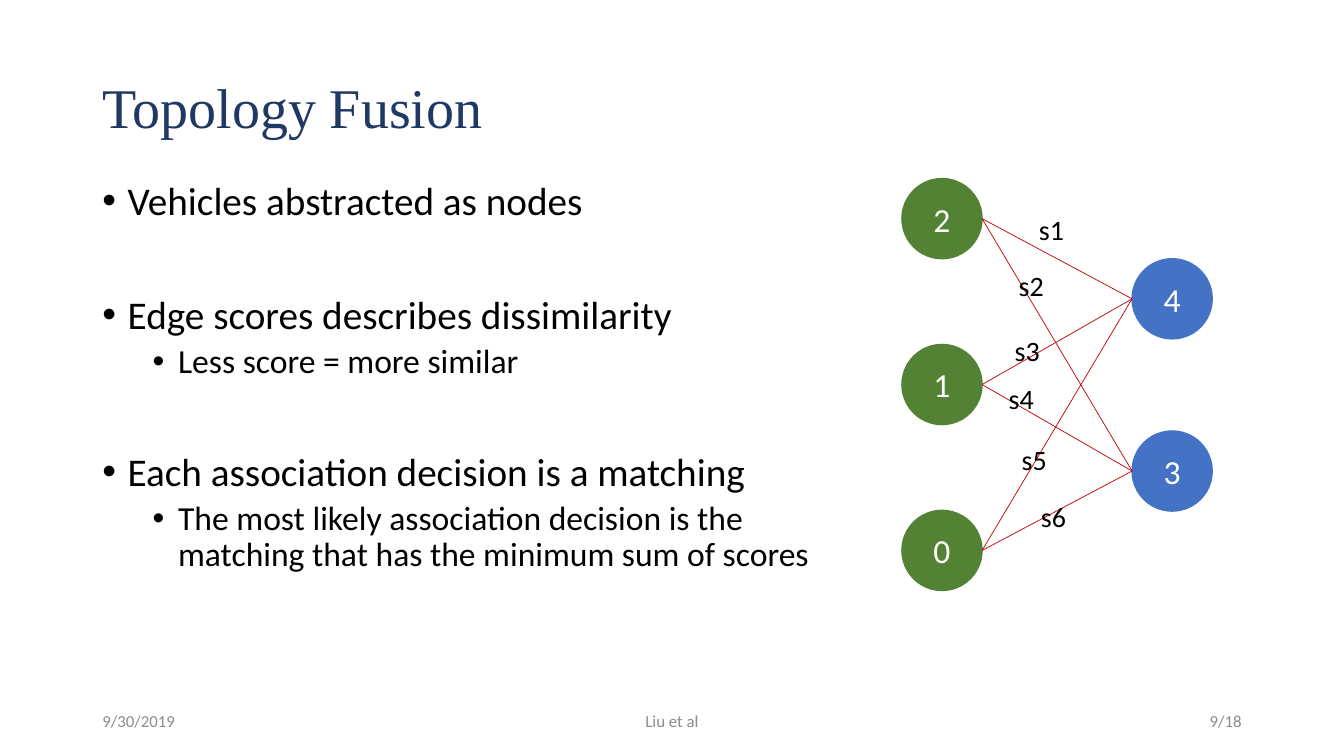
from lxml.etree import SubElement
from pptx import Presentation
from pptx.dml.color import RGBColor
from pptx.enum.shapes import MSO_CONNECTOR, MSO_SHAPE
from pptx.enum.text import MSO_ANCHOR, PP_ALIGN
from pptx.oxml.ns import qn
from pptx.util import Cm, Pt

POINTS = [
    (0, 0, "Vehicles abstracted as nodes"),
    (0, 51, "Edge scores describes dissimilarity"),
    (1, 5, "Less score = more similar"),
    (0, 51, "Each association decision is a matching"),
    (1, 5, "The most likely association decision is the matching "
           "that has the minimum sum of scores"),
]
LABELS = [("s1", 3.2, 0.74), ("s2", 2.69, 2.13), ("s3", 2.59, 3.78),
          ("s4", 2.44, 5), ("s5", 2.77, 6.53), ("s6", 3.25, 7.95)]


def color(code):
    """Turn a hex string into a colour."""
    return RGBColor.from_string(code)


def style(para, size, code, font="Calibri", align=PP_ALIGN.LEFT):
    """Set the font and alignment of a paragraph."""
    para.alignment = align
    para.font.size = Pt(size)
    para.font.name = font
    para.font.color.rgb = color(code)


def add_text(slide, box, text, size, code, font="Calibri",
             align=PP_ALIGN.LEFT, anchor=MSO_ANCHOR.MIDDLE):
    """Place one line of text in a box and return its paragraph."""
    frame = slide.shapes.add_textbox(*map(Cm, box)).text_frame
    frame.word_wrap = True
    frame.vertical_anchor = anchor
    para = frame.paragraphs[0]
    para.text = text
    style(para, size, code, font, align)
    return para


def add_title(slide, box):
    """Place the slide title."""
    para = add_text(slide, box, "Topology Fusion", 40, "203864",
                    "Times New Roman")
    para.line_spacing = 0.9


def add_points(slide, box):
    """Place the two-level bullet list."""
    frame = slide.shapes.add_textbox(*map(Cm, box)).text_frame
    frame.word_wrap = True
    for i, (level, space, text) in enumerate(POINTS):
        para = frame.add_paragraph() if i else frame.paragraphs[0]
        para.text = text
        para.level = level
        para.line_spacing = 0.9
        para.space_before = Pt(space)
        props = para._p.get_or_add_pPr()
        props.set("marL", str(Cm(0.64 + 1.27 * level)))
        props.set("indent", str(Cm(-0.64)))
        SubElement(props, qn("a:buFont"), typeface="Arial")
        SubElement(props, qn("a:buChar"), char="•")
        style(para, 28 - 4 * level, "000000")


def add_node(slide, box, text, code):
    """Draw a numbered round node."""
    node = slide.shapes.add_shape(MSO_SHAPE.OVAL, *map(Cm, box))
    node.shadow.inherit = False
    node.fill.solid()
    node.fill.fore_color.rgb = color(code)
    node.line.color.rgb = color(code)
    node.line.width = Pt(1)
    frame = node.text_frame
    frame.vertical_anchor = MSO_ANCHOR.MIDDLE
    frame.paragraphs[0].text = text
    style(frame.paragraphs[0], 24, "FFFFFF", align=PP_ALIGN.CENTER)


def add_edge(slide, start, end):
    """Draw a thin red edge between two points."""
    edge = slide.shapes.add_connector(MSO_CONNECTOR.STRAIGHT,
                                      *map(Cm, start + end))
    edge.line.color.rgb = color("C00000")
    edge.line.width = Pt(0.5)
    SubElement(edge._element.spPr, qn("a:effectLst"))


def add_graph(slide, box):
    """Draw the two-sided graph with its scored edges."""
    left, top, width, height = box
    size = 2.02
    right = left + width - size
    greens = [top + i * (height - size) / 2 for i in range(3)]
    blues = [top + 2.02 + i * 4.34 for i in range(2)]
    for text, y in zip("210", greens):
        add_node(slide, (left, y, size, size), text, "548235")
    for text, y in zip("43", blues):
        add_node(slide, (right, y, size, size), text, "4472C4")
    for green in greens:
        for blue in blues:
            add_edge(slide, (left + size, green + size / 2),
                     (right, blue + size / 2))
    for text, x, y in LABELS:
        add_text(slide, (left + x, top + y, 2.8, 1.12), text, 20, "000000",
                 anchor=MSO_ANCHOR.TOP)


def add_footer(slide, box):
    """Place the date, author and page number."""
    left, top, width, height = box
    side, mid = 7.62, 11.43
    parts = [("9/30/2019", left, side, PP_ALIGN.LEFT),
             ("Liu et al", left + (width - mid) / 2, mid, PP_ALIGN.CENTER),
             ("9/18", left + width - side, side, PP_ALIGN.RIGHT)]
    for text, x, span, align in parts:
        add_text(slide, (x, top, span, height), text, 12, "8C8C8C",
                 align=align)


def main():
    """Build the slide and save it."""
    deck = Presentation()
    deck.slide_width, deck.slide_height = Cm(33.87), Cm(19.05)
    slide = deck.slides.add_slide(deck.slide_layouts[6])
    add_title(slide, (2.33, 1.55, 29.21, 2.44))
    add_points(slide, (2.33, 4.45, 18.39, 12.7))
    add_graph(slide, (22.73, 4.5, 7.82, 10.38))
    add_footer(slide, (2.33, 17.65, 29.21, 1.02))
    deck.save("out.pptx")


if __name__ == "__main__":
    main()
